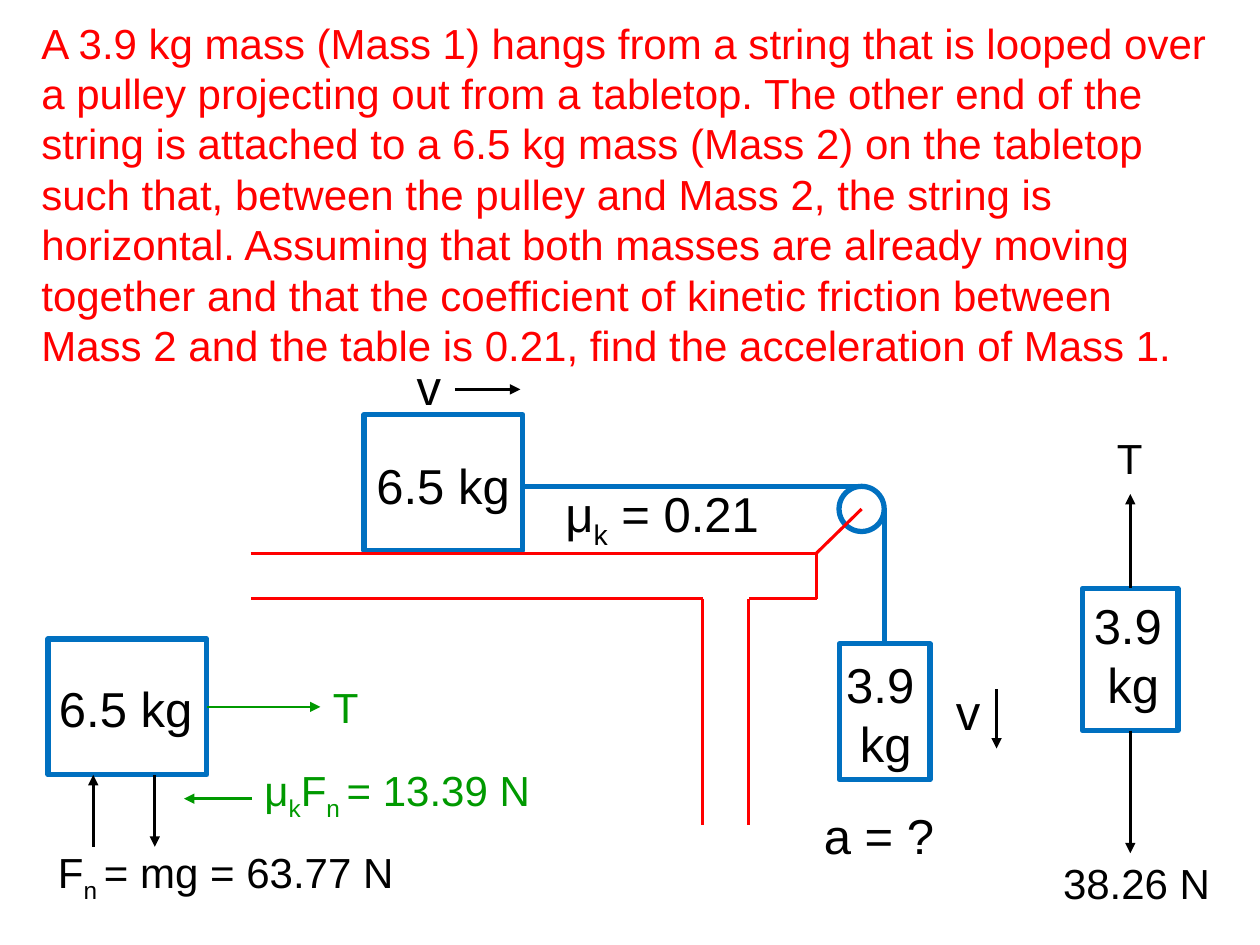
import pptx
import pptx.dml.color
import pptx.enum.shapes
import pptx.enum.text
import pptx.oxml
import pptx.oxml.ns
import pptx.util

Cm = pptx.util.Cm
Pt = pptx.util.Pt
Align = pptx.enum.text.PP_ALIGN
Anchor = pptx.enum.text.MSO_ANCHOR
Preset = pptx.enum.shapes.MSO_SHAPE

COLORS = {"ink": "000000", "red": "FF0000", "blue": "0070C0", "green": "009900"}
PROBLEM = (
    "A 3.9 kg mass (Mass 1) hangs from a string that is looped over a pulley "
    "projecting out from a tabletop. The other end of the string is attached to "
    "a 6.5 kg mass (Mass 2) on the tabletop such that, between the pulley and "
    "Mass 2, the string is horizontal. Assuming that both masses are already "
    "moving together and that the coefficient of kinetic friction between Mass 2 "
    "and the table is 0.21, find the acceleration of Mass 1."
)
LIGHT_MASS = "3.9\n kg"
HEAVY_MASS = "6.5 kg"


def color_of(name):
    """Return the named colour as an RGB value."""
    return pptx.dml.color.RGBColor.from_string(COLORS[name])


def set_all(target, values):
    """Set every attribute in a dict of format values."""
    for name, value in values.items():
        setattr(target, name, value)


def write(frame, text, size, color, anchor=Anchor.MIDDLE, align=Align.LEFT, wrap=True):
    """Fill a text frame; parts between underscores become subscripts."""
    set_all(frame, {"word_wrap": wrap, "vertical_anchor": anchor,
                    "auto_size": pptx.enum.text.MSO_AUTO_SIZE.NONE})
    paragraph = frame.paragraphs[0]
    paragraph.alignment = align
    for row, line in enumerate(text.split("\n")):
        if row:
            paragraph.add_line_break()
        for position, part in enumerate(line.split("_")):
            run = paragraph.add_run()
            run.text = part
            set_all(run.font, {"name": "Arial", "size": Pt(size)})
            run.font.color.rgb = color_of(color)
            if position % 2:
                run._r.get_or_add_rPr().set("baseline", "-25000")


def add_label(slide, origin, box, text, size=28, color="ink", **layout):
    """Place a text box relative to the origin of its region."""
    x, y, width, height = box
    label = slide.shapes.add_textbox(
        Cm(origin[0] + x), Cm(origin[1] + y), Cm(width), Cm(height))
    write(label.text_frame, text, size, color, **layout)


def add_outline(slide, origin, box, preset=Preset.RECTANGLE):
    """Place an unfilled blue body relative to the origin of its region."""
    x, y, width, height = box
    body = slide.shapes.add_shape(
        preset, Cm(origin[0] + x), Cm(origin[1] + y), Cm(width), Cm(height))
    body.shadow.inherit = False
    body.fill.background()
    body.line.color.rgb = color_of("blue")
    body.line.width = Pt(3)


def add_line(slide, origin, ends, color, width, arrow=False):
    """Draw a straight line, with an arrowhead at its end if asked."""
    x1, y1, x2, y2 = ends
    line = slide.shapes.add_connector(
        pptx.enum.shapes.MSO_CONNECTOR.STRAIGHT,
        Cm(origin[0] + x1), Cm(origin[1] + y1),
        Cm(origin[0] + x2), Cm(origin[1] + y2))
    line.line.color.rgb = color_of(color)
    line.line.width = Pt(width)
    properties = line._element.spPr
    if arrow:
        head = pptx.oxml.parse_xml(
            f'<a:tailEnd {pptx.oxml.ns.nsdecls("a")} type="triangle"/>')
        line.line._get_or_add_ln().append(head)
    properties.append(pptx.oxml.parse_xml(
        f'<a:effectLst {pptx.oxml.ns.nsdecls("a")}/>'))


def add_force(slide, origin, ends, color="ink"):
    """Draw a thin vector arrow."""
    add_line(slide, origin, ends, color, 1.5, arrow=True)


def build_problem(slide, box):
    """Write the problem statement in the title placeholder."""
    problem = slide.shapes.title
    set_all(problem, dict(zip(("left", "top", "width", "height"), map(Cm, box))))
    write(problem.text_frame, PROBLEM, 24, "red")


def build_setup(slide, origin):
    """Draw the table, pulley, string and both masses."""
    top, under, floor = 4.22, 5.14, 9.71
    edge, leg_left, leg_right = 11.41, 9.12, 10.04
    pulley_x, pulley_y, radius = 12.32, 3.33, 0.455
    string_y, hang_x, hang_y = 2.87, 12.78, 6.05

    add_outline(slide, origin, (2.29, 1.43, 3.2, 2.74))
    add_label(slide, origin, (6.1, 2.65, 4.6, 1.7), "μ_k_ = 0.21")
    add_outline(slide, origin, (pulley_x - radius, pulley_y - radius,
                                2 * radius, 2 * radius), Preset.OVAL)
    table_lines = (
        (0, top, edge, top), (edge, top, edge, under),
        (edge, top, pulley_x, pulley_y), (edge, under, leg_right, under),
        (leg_right, under, leg_right, floor), (leg_left, under, leg_left, floor),
        (leg_left, under, 0, under),
    )
    for ends in table_lines:
        add_line(slide, origin, ends, "red", 1.75)
    for ends in ((pulley_x, string_y, 5.47, string_y),
                 (hang_x, pulley_y, hang_x, hang_y)):
        add_line(slide, origin, ends, "blue", 3)
    add_outline(slide, origin, (11.87, hang_y, 1.83, 2.74))

    add_label(slide, origin, (11.76, 6.15, 1.93, 2.59), LIGHT_MASS)
    add_label(slide, origin, (2.29, 1.99, 3.58, 1.7), HEAVY_MASS)
    add_label(slide, origin, (3.1, 0, 1.42, 1.7), "v")
    add_force(slide, origin, (4.12, 0.92, 5.44, 0.92))
    add_label(slide, origin, (13.97, 6.56, 1.45, 1.7), "v")
    add_force(slide, origin, (15.04, 6.96, 15.04, 8.16))
    add_label(slide, origin, (11.31, 9.05, 3.02, 1.7), "a = ?")


def build_heavy_forces(slide, origin):
    """Draw the free-body diagram of the mass on the table."""
    width, height = 3.2, 2.74
    add_outline(slide, origin, (0, 0, width, height))
    add_label(slide, origin, (-0.03, 0.66, width, 1.45), HEAVY_MASS, wrap=False)
    add_force(slide, origin, (width, height / 2, 5.49, height / 2), "green")
    add_force(slide, origin, (4.11, 3.22, 2.74, 3.22), "green")
    add_force(slide, origin, (0.91, 4.19, 0.91, height))
    add_force(slide, origin, (2.15, height, 2.15, 4.19))
    for box, text, color in (
        ((5.49, 0.74, 1.35, 1.45), "T", "green"),
        ((4.11, 2.41, 6.5, 1.52), "μ_k_F_n _= 13.39 N", "green"),
        ((-0.05, 4.06, 8.23, 1.4), "F_n _= mg = 63.77 N", "ink"),
    ):
        add_label(slide, origin, box, text, 24, color, anchor=Anchor.TOP)


def build_light_forces(slide, origin):
    """Draw the free-body diagram of the hanging mass."""
    width, height = 1.93, 2.87
    middle = width / 2
    add_outline(slide, origin, (0, 0, width, height))
    add_label(slide, origin, (-0.02, 0.03, width, 2.59), LIGHT_MASS)
    add_force(slide, origin, (middle, 0, middle, -1.9))
    add_force(slide, origin, (middle, height, middle, 5.34))
    add_label(slide, origin, (0.18, -3.27, 1.55, 1.35), "T", 24,
              anchor=Anchor.TOP, align=Align.CENTER)
    add_label(slide, origin, (-0.64, 5.31, 3.73, 1.45), "38.26 N", 24,
              anchor=Anchor.TOP)


def main():
    """Build the slide and save the presentation."""
    deck = pptx.Presentation()
    set_all(deck, {"slide_width": Cm(25.4), "slide_height": Cm(19.05)})
    slide = deck.slides.add_slide(deck.slide_layouts[5])
    build_problem(slide, (0.58, 0.18, 24.16, 7.44))
    build_setup(slide, (5.05, 6.93))
    build_heavy_forces(slide, (0.97, 12.88))
    build_light_forces(slide, (21.82, 11.86))
    deck.save("out.pptx")


if __name__ == "__main__":
    main()
